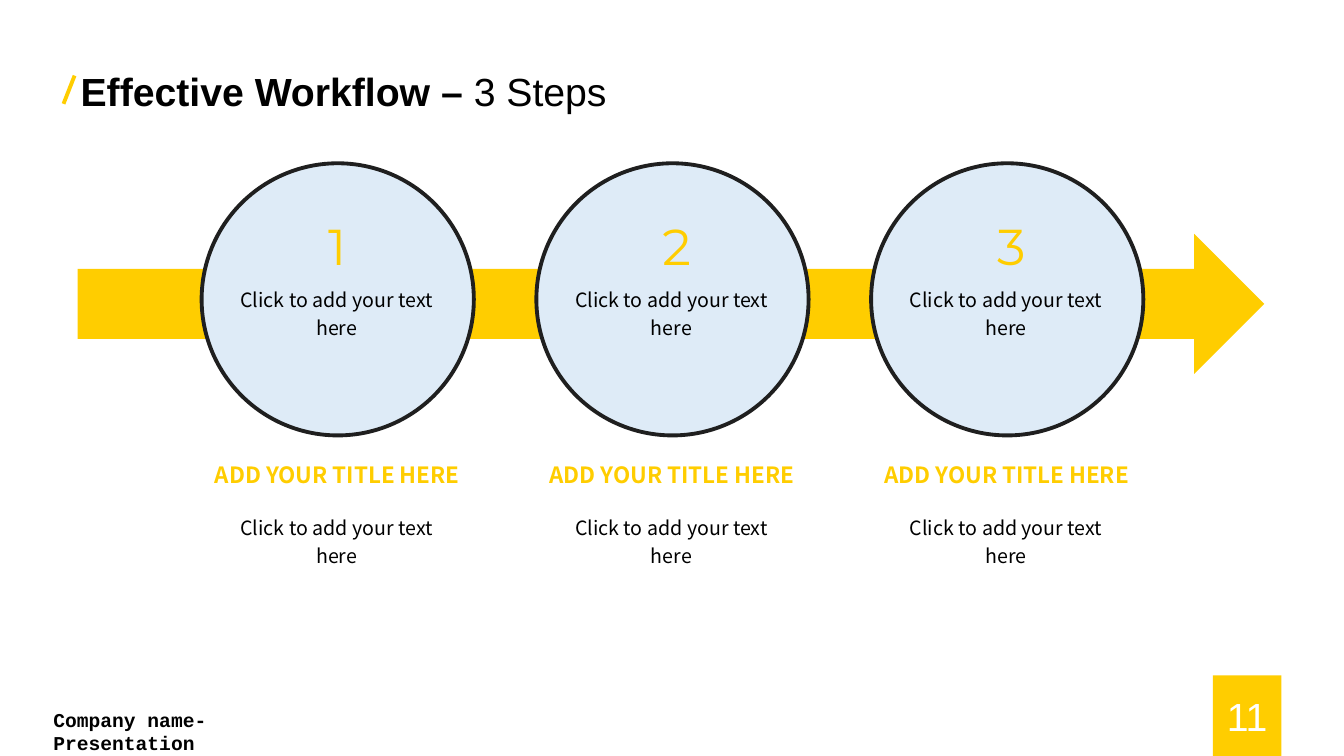
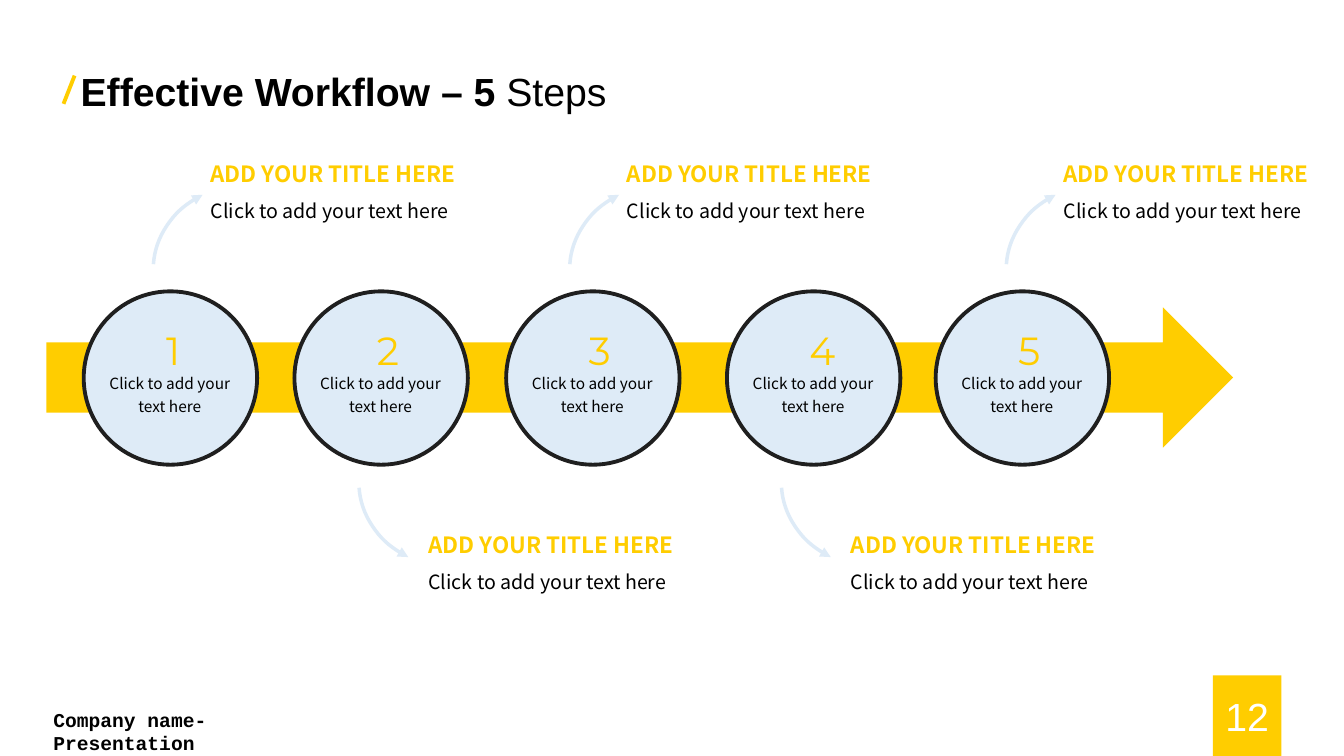
from lxml import etree
from pptx import Presentation
from pptx import util as u
from pptx.dml import color
from pptx.enum import shapes, text
from pptx.oxml import ns

COLORS = {"yellow": "FFCD00", "pale": "DEEBF7", "ink": "1F1F1F",
          "black": "000000", "white": "FFFFFF"}
SANS = "Noto Sans CJK SC"
LEFT, CENTER = text.PP_ALIGN.LEFT, text.PP_ALIGN.CENTER
TOP, MIDDLE = text.MSO_ANCHOR.TOP, text.MSO_ANCHOR.MIDDLE
GROW, FIXED = text.MSO_AUTO_SIZE.SHAPE_TO_FIT_TEXT, text.MSO_AUTO_SIZE.NONE
SHAPE = shapes.MSO_SHAPE

STYLES = {
    "title": {"name": "Arial", "size": u.Pt(28), "bold": True, "color": "black"},
    "page": {"name": "Arial", "size": u.Pt(28), "color": "white"},
    "footer": {"name": "Courier New", "size": u.Pt(14), "bold": True, "color": "black"},
    "big number": {"name": "Montserrat", "size": u.Pt(36), "color": "yellow"},
    "number": {"name": "Montserrat", "size": u.Pt(28), "color": "yellow"},
    "heading": {"name": SANS, "size": u.Pt(16), "bold": True, "color": "yellow"},
    "body": {"name": SANS, "size": u.Pt(14), "color": "black"},
    "small": {"name": SANS, "size": u.Pt(11), "color": "black"},
}
HEADING = "ADD YOUR TITLE HERE"
BODY = "Click to add your text here"


def inches(*lengths):
    return [u.Inches(v) for v in lengths]


def rgb(name):
    return color.RGBColor.from_string(COLORS[name])


def add_run(p, words, style, **changes):
    r = p.add_run()
    r.text = words
    for key, value in {**STYLES[style], **changes}.items():
        if key == "color":
            r.font.color.rgb = rgb(value)
        else:
            setattr(r.font, key, value)


def format_frame(sp, align=LEFT, anchor=TOP, spacing=None, size=GROW):
    tf = sp.text_frame
    for key, value in {"word_wrap": True, "auto_size": size,
                       "vertical_anchor": anchor}.items():
        setattr(tf, key, value)
    p = tf.paragraphs[0]
    for key, value in {"alignment": align, "line_spacing": spacing}.items():
        setattr(p, key, value)
    return p


def add_text(s, box, words, style, align=LEFT):
    sp = s.shapes.add_textbox(*inches(*box))
    spacing = 1.2 if style in ("body", "small") else None
    add_run(format_frame(sp, align, spacing=spacing), words, style)


def add_shape(s, kind, box, fill=None, line=None, width=2.75):
    sp = s.shapes.add_shape(kind, *inches(*box))
    sp.shadow.inherit = False
    if fill:
        sp.fill.solid()
        sp.fill.fore_color.rgb = rgb(fill)
    else:
        sp.fill.background()
    if line:
        sp.line.color.rgb = rgb(line)
        sp.line.width = u.Pt(width)
    else:
        sp.line.fill.background()
    return sp


def add_frame(prs, strong, light, page):
    s = prs.slides.add_slide(prs.slide_layouts[5])
    title = s.shapes.title
    title.left, title.top, title.width, title.height = inches(0.7, 0.62, 5.77, 0.57)
    p = format_frame(title, anchor=MIDDLE)
    add_run(p, strong, "title")
    add_run(p, light, "title", bold=False)

    slash = s.shapes.add_connector(shapes.MSO_CONNECTOR.STRAIGHT,
                                   *inches(0.74, 0.75, 0.63, 1.03))
    slash.line.color.rgb = rgb("yellow")
    slash.line.width = u.Pt(2.75)
    etree.SubElement(slash._element.spPr, ns.qn("a:effectLst"))

    badge = add_shape(s, SHAPE.RECTANGLE, (12.03, 6.7, 0.68, 0.8), "yellow")
    add_run(format_frame(badge, CENTER, MIDDLE, size=FIXED), str(page), "page")
    add_text(s, (0.43, 6.97, 3.11, 0.34), "Company name-Presentation", "footer")
    return s


def add_band(s, x, y):
    add_shape(s, SHAPE.RIGHT_ARROW, (x, y, 11.77, 1.39), "yellow")


def add_circle(s, x, y, size):
    add_shape(s, SHAPE.OVAL, (x, y, size, size), "pale", "ink")


def add_large_step(s, x, y, number):
    add_circle(s, x, y, 2.7)
    add_text(s, (x + 1.15, y + 0.46, 0.39, 0.71), str(number), "big number", CENTER)
    add_text(s, (x - 0.06, y + 2.91, 2.81, 0.37), HEADING, "heading", CENTER)
    for drop in (1.14, 3.4):
        add_text(s, (x + 0.26, y + drop, 2.16, 0.67), BODY, "body", CENTER)


def add_small_step(s, x, y, number):
    add_circle(s, x, y, 1.72)
    add_text(s, (x + 0.72, y + 0.3, 0.28, 0.57), str(number), "number", CENTER)
    add_text(s, (x + 0.09, y + 0.74, 1.53, 0.55), BODY, "small", CENTER)


def add_callout(s, x, y, below):
    arc = add_shape(s, SHAPE.ARC, (x, y, 1.95, 1.7), line="pale", width=2.5)
    arc.adjustments[0], arc.adjustments[1] = 109.73, 141.98
    etree.SubElement(arc.line._get_or_add_ln(), ns.qn("a:tailEnd"), type="triangle")
    if below:
        arc._element.spPr.find(ns.qn("a:xfrm")).set("flipV", "1")
    dx, dy = (0.59, 1.28) if below else (0.47, -0.28)
    add_text(s, (x + dx, y + dy, 2.81, 0.37), HEADING, "heading")
    add_text(s, (x + dx, y + dy + 0.34, 2.72, 0.38), BODY, "body")


def three_steps(prs):
    s = add_frame(prs, "Effective Workflow – ", "3 Steps", 11)
    add_band(s, 0.77, 2.32)
    for i in range(3):
        add_large_step(s, 2 + 3.32 * i, 1.62, i + 1)


def five_steps(prs):
    s = add_frame(prs, "Effective Workflow – 5 ", "Steps", 12)
    add_band(s, 0.46, 3.05)
    steps = [(0.83, 1.52), (2.92, 3.56), (5.02, 5.65), (7.21, 7.75), (9.28, 9.98)]
    for i, (x, arc_x) in enumerate(steps):
        below = i % 2 == 1
        add_small_step(s, x, 2.89, i + 1)
        add_callout(s, arc_x, 3.94 if below else 1.82, below)


def main():
    prs = Presentation()
    prs.slide_width, prs.slide_height = inches(13.33, 7.5)
    three_steps(prs)
    five_steps(prs)
    prs.save("out.pptx")


if __name__ == "__main__":
    main()
